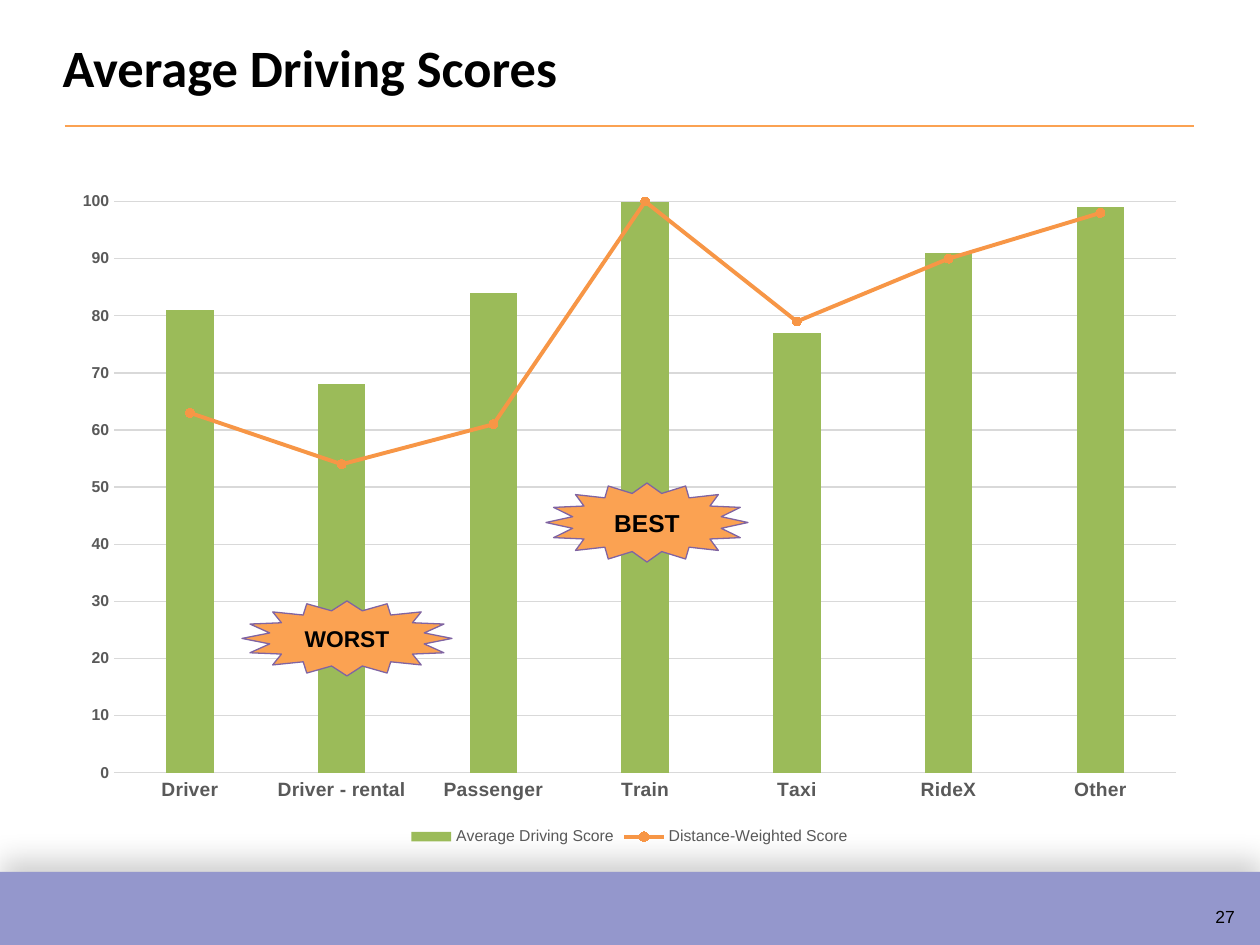
from lxml import etree
from pptx import Presentation, util as u
from pptx.chart.data import CategoryChartData
from pptx.dml.color import RGBColor
from pptx.enum import chart as charts, shapes, text
from pptx.oxml import parse_xml
from pptx.oxml.ns import nsdecls, qn

PX_PER_INCH = 126
BLACK = RGBColor(0x00, 0x00, 0x00)
GREY = RGBColor(0x59, 0x59, 0x59)
GRID = RGBColor(0xD9, 0xD9, 0xD9)
LAVENDER = RGBColor(0x94, 0x97, 0xCC)
AMBER = RGBColor(0xFB, 0xA2, 0x52)
PURPLE = RGBColor(0x80, 0x64, 0xA2)
GREEN = RGBColor(0x9B, 0xBB, 0x59)
ORANGE = RGBColor(0xF7, 0x96, 0x46)

CATEGORIES = ["Driver", "Driver - rental", "Passenger", "Train", "Taxi", "RideX", "Other"]
SCORES = {
    "Average Driving Score": [81, 68, 84, 100, 77, 91, 99],
    "Distance-Weighted Score": [63, 54, 61, 100, 79, 90, 98],
}
BADGES = [("BEST", 14, (546, 483, 202, 79)), ("WORST", 13, (242, 601, 210, 75))]


def px(length):
    """Turn a length in px into EMU."""
    return u.Inches(length / PX_PER_INCH)


def place(box):
    """Turn a px box into EMU."""
    return [px(length) for length in box]


def set_attributes(target, values):
    """Set each attribute named in a dict."""
    for name, value in values.items():
        setattr(target, name, value)


def style_font(font, size, color=BLACK, bold=False, name="Arial"):
    """Set size, colour, weight and typeface of a font."""
    set_attributes(font, {"size": u.Pt(size), "bold": bold, "name": name})
    font.color.rgb = color


def style_line(line, color, width):
    """Set colour and width of a line."""
    line.color.rgb = color
    line.width = u.Pt(width)


def add_footer(slide, box, number):
    """Draw the footer band with its shadow and the page number."""
    left, top, width, height = box
    band = slide.shapes.add_shape(shapes.MSO_SHAPE.RECTANGLE, *place(box))
    band.fill.solid()
    band.fill.fore_color.rgb = LAVENDER
    band.line.fill.background()
    band._element.spPr.append(parse_xml(
        f'<a:effectLst {nsdecls("a")}><a:outerShdw blurRad="{u.Pt(16)}" dist="{u.Pt(8)}" '
        f'dir="{277 * 60000}" algn="ctr" rotWithShape="0"><a:srgbClr val="{BLACK}">'
        '<a:alpha val="19000"/></a:srgbClr></a:outerShdw></a:effectLst>'))
    label = slide.shapes.add_textbox(*place((left + width - 57, top + 17, 47, 43)))
    label.text_frame.word_wrap = False
    paragraph = label.text_frame.paragraphs[0]
    set_attributes(paragraph, {"text": number, "line_spacing": 1.5, "space_before": u.Pt(6)})
    style_font(paragraph.runs[0].font, 10)


def add_heading(slide, box, title):
    """Fill the title placeholder and draw the rule below it."""
    left, top, width, height = box
    heading = slide.shapes.title
    set_attributes(heading, dict(zip(("left", "top", "width", "height"), place(box))))
    set_attributes(heading.text_frame, {
        "text": title, "word_wrap": True, "vertical_anchor": text.MSO_ANCHOR.MIDDLE})
    paragraph = heading.text_frame.paragraphs[0]
    paragraph.alignment = text.PP_ALIGN.LEFT
    style_font(paragraph.runs[0].font, 30, bold=True, name="Calibri")
    rule_top = top + height + 21
    rule = slide.shapes.add_connector(
        shapes.MSO_CONNECTOR.STRAIGHT,
        *place((left + 15, rule_top, left + width - 9, rule_top)))
    style_line(rule.line, AMBER, 1)
    etree.SubElement(rule._element.spPr, qn("a:effectLst"))


def turn_last_series_into_line(chart):
    """Move the last column series to a line plot on the same axes."""
    bar_plot = chart._chartSpace.find(".//" + qn("c:barChart"))
    series = bar_plot.findall(qn("c:ser"))[-1]
    for bar_setting in series.findall(qn("c:invertIfNegative")):
        series.remove(bar_setting)
    line_plot = parse_xml(
        f'<c:lineChart {nsdecls("c")}><c:grouping val="standard"/>'
        '<c:varyColors val="0"/><c:marker val="1"/></c:lineChart>')
    line_plot.insert(2, series)
    for axis in bar_plot.findall(qn("c:axId")):
        etree.SubElement(line_plot, qn("c:axId"), val=axis.get("val"))
    bar_plot.addnext(line_plot)


def style_axes(chart):
    """Format the category and value axes."""
    for axis, size in ((chart.category_axis, 11), (chart.value_axis, 9)):
        style_font(axis.tick_labels.font, size, GREY, True)
        set_attributes(axis, {"major_tick_mark": charts.XL_TICK_MARK.NONE,
                              "minor_tick_mark": charts.XL_TICK_MARK.NONE})
    style_line(chart.category_axis.format.line, GRID, 0.75)
    value_axis = chart.value_axis
    set_attributes(value_axis, {"minimum_scale": 0, "maximum_scale": 100,
                                "major_unit": 10, "has_major_gridlines": True})
    set_attributes(value_axis.tick_labels, {"number_format": "0",
                                            "number_format_is_linked": False})
    value_axis.format.line.fill.background()
    style_line(value_axis.major_gridlines.format.line, GRID, 0.75)


def add_score_chart(slide, box):
    """Draw the combined column and line chart of the scores."""
    data = CategoryChartData(number_format="0")
    data.categories = CATEGORIES
    for name, values in SCORES.items():
        data.add_series(name, values)
    chart = slide.shapes.add_chart(
        charts.XL_CHART_TYPE.COLUMN_CLUSTERED, *place(box), data).chart
    turn_last_series_into_line(chart)
    set_attributes(chart, {"has_title": False, "has_legend": True})
    style_font(chart.font, 10)
    set_attributes(chart.legend, {"position": charts.XL_LEGEND_POSITION.BOTTOM,
                                  "include_in_layout": False})
    style_font(chart.legend.font, 9, GREY)
    style_axes(chart)
    columns, lines = chart.plots
    set_attributes(columns, {"gap_width": 219, "overlap": -27, "vary_by_categories": False})
    column_fill = columns.series[0].format.fill
    column_fill.solid()
    column_fill.fore_color.rgb = GREEN
    weighted = lines.series[0]
    weighted.smooth = False
    style_line(weighted.format.line, ORANGE, 2.25)
    set_attributes(weighted.marker, {"style": charts.XL_MARKER_STYLE.CIRCLE, "size": 5})
    weighted.marker.format.fill.solid()
    weighted.marker.format.fill.fore_color.rgb = ORANGE
    style_line(weighted.marker.format.line, ORANGE, 0.75)


def add_badge(slide, box, label, size):
    """Draw a star badge with a bold label."""
    badge = slide.shapes.add_shape(shapes.MSO_SHAPE.STAR_16_POINT, *place(box))
    badge.shadow.inherit = False
    badge.fill.solid()
    badge.fill.fore_color.rgb = AMBER
    style_line(badge.line, PURPLE, 0.75)
    set_attributes(badge.text_frame, {
        "text": label, "word_wrap": True, "vertical_anchor": text.MSO_ANCHOR.MIDDLE})
    paragraph = badge.text_frame.paragraphs[0]
    paragraph.alignment = text.PP_ALIGN.CENTER
    style_font(paragraph.runs[0].font, size, bold=True)


def main():
    """Build the slide and save it."""
    presentation = Presentation()
    set_attributes(presentation, {"slide_width": px(1260), "slide_height": px(945)})
    slide = presentation.slides.add_slide(presentation.slide_layouts[5])
    add_footer(slide, (0, 872, 1260, 73), "27")
    add_heading(slide, (50, 28, 1153, 77), "Average Driving Scores")
    add_score_chart(slide, (60, 179, 1139, 672))
    for label, size, box in BADGES:
        add_badge(slide, box, label, size)
    presentation.save("out.pptx")


if __name__ == "__main__":
    main()
